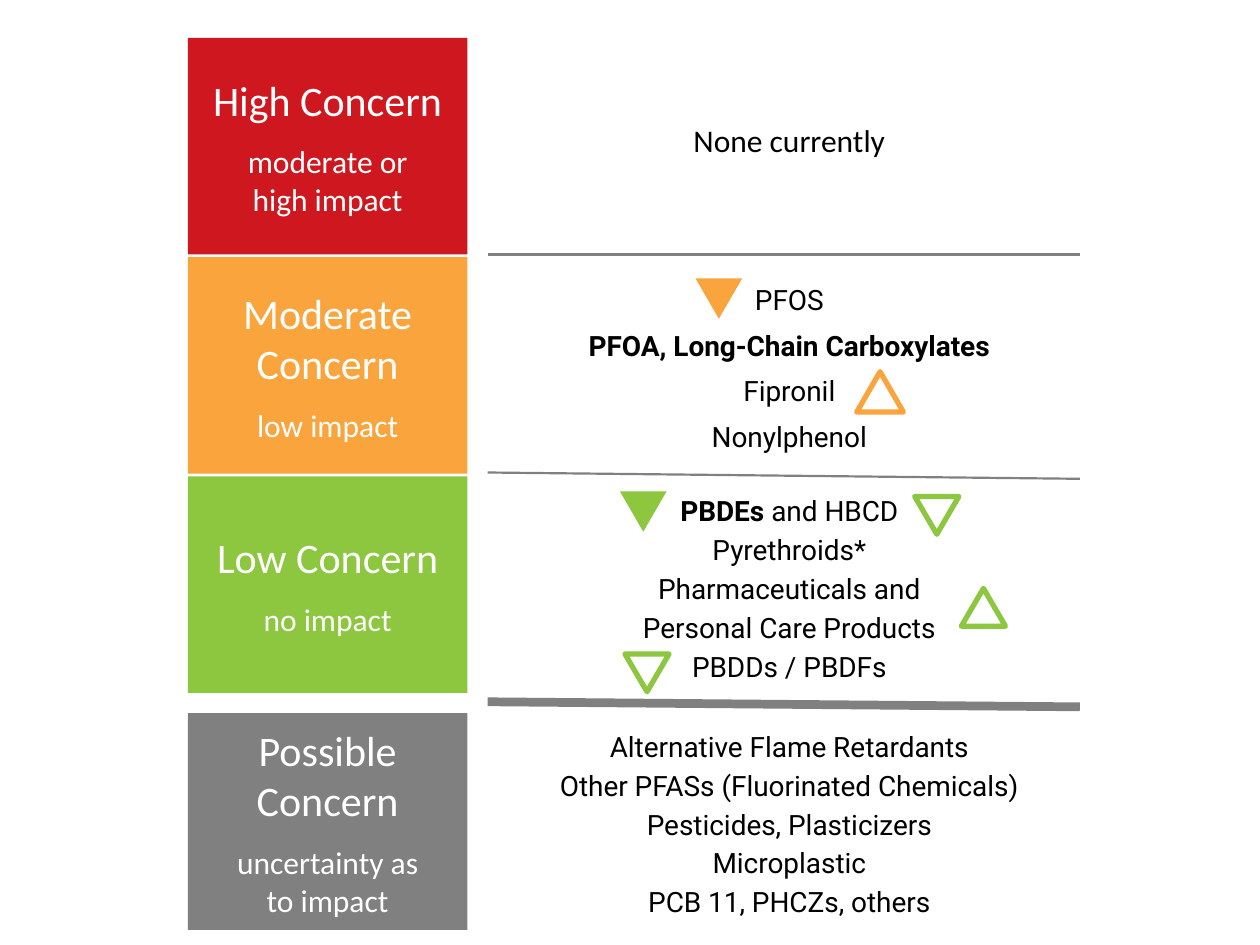
"""Build a slide that ranks contaminants by level of concern."""
from dataclasses import dataclass

import pptx
import pptx.dml.color
import pptx.enum.shapes
import pptx.enum.text
import pptx.oxml
import pptx.oxml.ns
import pptx.util
from pptx.util import Inches


@dataclass(frozen=True)
class Theme:
    red: str = "CE171F"
    orange: str = "FAA43D"
    green: str = "8DC63F"
    gray: str = "808080"
    white: str = "FFFFFF"
    black: str = "000000"
    label_font: str = "Calibri"
    list_font: str = "Roboto"
    title_size: int = 24
    note_size: int = 18
    list_size: int = 16


@dataclass(frozen=True)
class Level:
    top: float
    color: str
    title: str
    notes: tuple


@dataclass(frozen=True)
class Listing:
    top: float
    height: float
    lines: tuple
    bold: str = ""
    spacing: float = 1.0


@dataclass(frozen=True)
class Divider:
    start: float
    end: float
    width: float


@dataclass(frozen=True)
class Trend:
    left: float
    top: float
    color: str
    width: float = 0.35
    height: float = 0.3
    down: bool = False
    filled: bool = False


T = Theme()
BOX_LEFT, BOX_WIDTH, BOX_HEIGHT = 1.49, 2.22, 1.72
LIST_LEFT, LIST_WIDTH = 3.95, 4.63
RULE_LEFT, RULE_RIGHT = 3.87, 8.57

LEVELS = (
    Level(0.3, T.red, "High Concern", ("moderate or", "high impact")),
    Level(2.04, T.orange, "Moderate Concern", ("low impact",)),
    Level(3.78, T.green, "Low Concern", ("no impact",)),
    Level(5.66, T.gray, "Possible Concern", ("uncertainty as", "to impact")),
)
LISTINGS = (
    Listing(2.14, 1.51, ("PFOS", "PFOA, Long-Chain Carboxylates", "Fipronil", "Nonylphenol"),
            bold="PFOA, Long-Chain Carboxylates", spacing=1.2),
    Listing(3.87, 1.62, ("PBDEs and HBCD", "Pyrethroids*", "Pharmaceuticals and",
                         "Personal Care Products", "PBDDs / PBDFs"), bold="PBDEs"),
    Listing(5.74, 1.93, ("Alternative Flame Retardants", "Other PFASs (Fluorinated Chemicals)",
                         "Pesticides, Plasticizers", "Microplastic", "PCB 11, PHCZs, others")),
)
DIVIDERS = (Divider(2.02, 2.02, 1.25), Divider(3.75, 3.8, 1.25), Divider(5.57, 5.61, 5))
TRENDS = (
    Trend(5.52, 2.21, T.orange, 0.37, 0.32, down=True, filled=True),
    Trend(6.8, 2.95, T.orange, 0.37, 0.32),
    Trend(4.92, 3.9, T.green, 0.37, 0.32, down=True, filled=True),
    Trend(7.26, 3.94, T.green, down=True),
    Trend(7.63, 4.67, T.green),
    Trend(4.96, 5.19, T.green, down=True),
)


def rgb(color: str) -> pptx.dml.color.RGBColor:
    """Turn a hex string into a colour."""
    return pptx.dml.color.RGBColor.from_string(color)


def write(tf, text: str, *, size: int, font: str, color: str, bold: str = "",
          before: float = 0, after: float = 0, spacing: float = 1.0) -> None:
    """Add a centred paragraph, with a leading bold part where it matches."""
    p = tf.paragraphs[0] if not tf.paragraphs[0].runs else tf.add_paragraph()
    p.alignment = pptx.enum.text.PP_ALIGN.CENTER
    p.space_before, p.space_after = pptx.util.Pt(before), pptx.util.Pt(after)
    p.line_spacing = spacing
    lead = bold if bold and text.startswith(bold) else ""
    for part, heavy in ((lead, True), (text[len(lead):], False)):
        if part:
            r = p.add_run()
            r.text = part
            r.font.size, r.font.name, r.font.bold = pptx.util.Pt(size), font, heavy
            r.font.color.rgb = rgb(color)


def add_text_box(s, top: float, height: float):
    """Add a wrapping text box in the right column and return its frame."""
    sp = s.shapes.add_textbox(Inches(LIST_LEFT), Inches(top), Inches(LIST_WIDTH), Inches(height))
    sp.text_frame.word_wrap = True
    return sp.text_frame


def draw_level(s, level: Level) -> None:
    """Draw one coloured concern box."""
    sp = s.shapes.add_shape(pptx.enum.shapes.MSO_SHAPE.RECTANGLE, Inches(BOX_LEFT),
                            Inches(level.top), Inches(BOX_WIDTH), Inches(BOX_HEIGHT))
    sp.shadow.inherit = False
    sp.fill.solid()
    sp.fill.fore_color.rgb = rgb(level.color)
    sp.line.fill.background()
    tf = sp.text_frame
    tf.word_wrap = True
    tf.vertical_anchor = pptx.enum.text.MSO_ANCHOR.MIDDLE
    write(tf, level.title, size=T.title_size, font=T.label_font, color=T.white)
    for i, note in enumerate(level.notes):
        write(tf, note, size=T.note_size, font=T.label_font, color=T.white,
              before=0 if i else 10)


def draw_listing(s, listing: Listing) -> None:
    """Write the contaminants of one level."""
    tf = add_text_box(s, listing.top, listing.height)
    for line in listing.lines:
        write(tf, line, size=T.list_size, font=T.list_font, color=T.black,
              bold=listing.bold, after=3, spacing=listing.spacing)


def draw_divider(s, divider: Divider) -> None:
    """Draw a rule between two levels."""
    line = s.shapes.add_connector(pptx.enum.shapes.MSO_CONNECTOR.STRAIGHT, Inches(RULE_LEFT),
                                  Inches(divider.start), Inches(RULE_RIGHT), Inches(divider.end))
    line.line.color.rgb = rgb(T.gray)
    line.line.width = pptx.util.Pt(divider.width)
    line._element.spPr.append(pptx.oxml.parse_xml(
        f"<a:effectLst {pptx.oxml.ns.nsdecls('a')}/>"))


def draw_trend(s, trend: Trend) -> None:
    """Draw a filled or outlined trend triangle."""
    sp = s.shapes.add_shape(pptx.enum.shapes.MSO_SHAPE.ISOSCELES_TRIANGLE, Inches(trend.left),
                            Inches(trend.top), Inches(trend.width), Inches(trend.height))
    sp.shadow.inherit = False
    sp.rotation = 180 if trend.down else 0
    if trend.filled:
        sp.fill.solid()
        sp.fill.fore_color.rgb = rgb(trend.color)
        sp.line.fill.background()
    else:
        sp.fill.background()
        sp.line.color.rgb = rgb(trend.color)
        sp.line.width = pptx.util.Pt(3)


def main() -> None:
    """Build and save the slide."""
    prs = pptx.Presentation()
    prs.slide_width, prs.slide_height = Inches(10), Inches(7.5)
    s = prs.slides.add_slide(prs.slide_layouts[6])
    write(add_text_box(s, 0.91, 0.4), "None currently",
          size=T.note_size, font=T.label_font, color=T.black)
    for draw, items in ((draw_listing, LISTINGS), (draw_divider, DIVIDERS),
                        (draw_level, LEVELS), (draw_trend, TRENDS)):
        for item in items:
            draw(s, item)
    prs.save("out.pptx")


if __name__ == "__main__":
    main()
